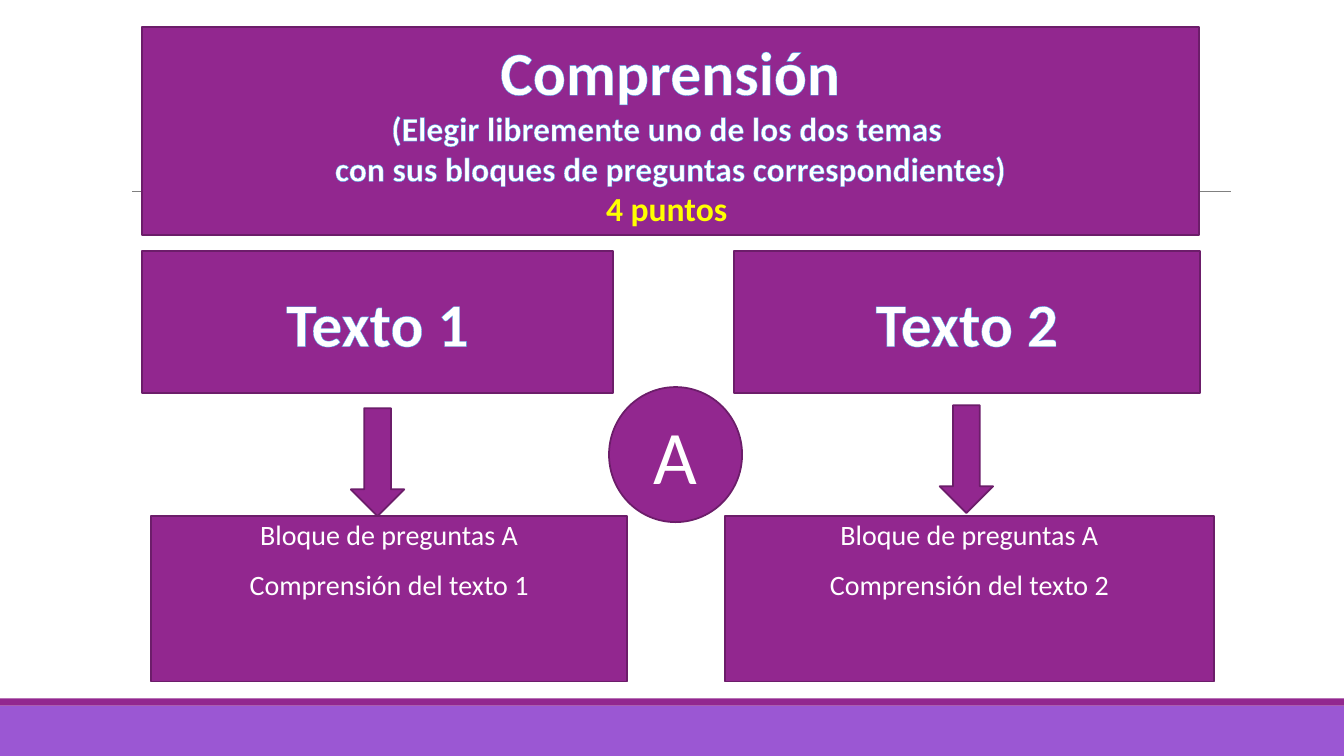
from lxml import etree
from pptx import Presentation
from pptx.dml.color import RGBColor
from pptx.enum import shapes, text
from pptx.oxml.ns import qn
from pptx.util import Inches, Pt

COLOURS = {
    "purple": "92278F",
    "dark_purple": "6C1D6A",
    "violet": "9B57D3",
    "grey": "808080",
    "white": "FFFFFF",
    "yellow": "FFFF00",
    "blue": "45A5ED",
}
FONT = "Calibri"


def colour(name):
    return RGBColor.from_string(COLOURS[name])


def place(shape, left, top, width, height):
    shape.left, shape.top = Inches(left), Inches(top)
    shape.width, shape.height = Inches(width), Inches(height)


def paint(shape, fill="purple", line="dark_purple"):
    shape.fill.solid()
    shape.fill.fore_color.rgb = colour(fill)
    if line:
        shape.line.color.rgb = colour(line)
        shape.line.width = Pt(1.25)
    else:
        shape.line.fill.background()


def outline_text(run, name, width):
    """Draw a thin coloured contour around the letters of a run."""
    line = etree.Element(qn("a:ln"), w=str(Pt(width)))
    fill = etree.SubElement(line, qn("a:solidFill"))
    etree.SubElement(fill, qn("a:srgbClr"), val=COLOURS[name])
    run.font._element.insert(0, line)


def write(paragraph, words, size=20, color="white", bold=False, outlined=False):
    paragraph.alignment = text.PP_ALIGN.CENTER
    run = paragraph.add_run()
    run.text = words
    run.font.name = FONT
    run.font.size = Pt(size)
    run.font.bold = bold
    run.font.color.rgb = colour(color)
    if outlined:
        outline_text(run, "blue", 0.8)


def add_figure(slide, kind, box, fill="purple", line="dark_purple"):
    shape = slide.shapes.add_shape(kind, *map(Inches, box))
    shape.shadow.inherit = False
    paint(shape, fill, line)
    shape.text_frame.vertical_anchor = text.MSO_ANCHOR.MIDDLE
    return shape


def add_rule(slide, left, right, top):
    """Add a thin horizontal line behind everything else."""
    rule = slide.shapes.add_connector(
        shapes.MSO_CONNECTOR.STRAIGHT,
        Inches(left), Inches(top), Inches(right), Inches(top))
    rule.line.color.rgb = colour("grey")
    rule.line.width = Pt(0.5)
    etree.SubElement(rule._element.spPr, qn("a:effectLst"))
    slide.shapes._spTree.insert(2, rule._element)


def fill_title(title):
    place(title, 1.41, 0.27, 10.48, 2.06)
    paint(title)
    frame = title.text_frame
    frame.auto_size = text.MSO_AUTO_SIZE.NONE
    frame.vertical_anchor = text.MSO_ANCHOR.MIDDLE
    lines = [
        ("Comprensión", 44, "white"),
        ("(Elegir libremente uno de los dos temas ", 24, "white"),
        ("con sus bloques de preguntas correspondientes)", 24, "white"),
        ("4 puntos ", 24, "yellow"),
    ]
    for index, (words, size, color) in enumerate(lines):
        paragraph = frame.add_paragraph() if index else frame.paragraphs[0]
        write(paragraph, words, size=size, color=color, bold=True, outlined=True)


def fill_questions(body, box, lines):
    place(body, *box)
    paint(body)
    frame = body.text_frame
    frame.auto_size = text.MSO_AUTO_SIZE.NONE
    frame.vertical_anchor = text.MSO_ANCHOR.TOP
    frame.margin_left = frame.margin_right = 0
    frame.margin_top = frame.margin_bottom = Inches(0.05)
    for index, words in enumerate(lines):
        paragraph = frame.add_paragraph() if index else frame.paragraphs[0]
        paragraph.line_spacing = 0.9
        paragraph.space_before, paragraph.space_after = Pt(12), Pt(2)
        write(paragraph, words)
        properties = paragraph._p.get_or_add_pPr()
        properties.set("marL", "0")
        properties.set("indent", "0")
        etree.SubElement(properties, qn("a:buNone"))


def main():
    presentation = Presentation()
    presentation.slide_width = Inches(13.33)
    presentation.slide_height = Inches(7.5)
    slide = presentation.slides.add_slide(presentation.slide_layouts[3])
    rectangle = shapes.MSO_SHAPE.RECTANGLE

    add_rule(slide, 1.31, 12.21, 1.9)
    add_figure(slide, rectangle, (0, 7, 13.33, 0.5), "violet", None)
    add_figure(slide, rectangle, (0, 6.93, 13.33, 0.07), "purple", None)
    fill_title(slide.shapes.title)

    # Heading left and width, arrow left and top, question block left and width
    columns = [
        (1.41, 4.67, 3.48, 4.05, 1.5, 4.72),
        (7.28, 4.62, 9.32, 4.02, 7.19, 4.85),
    ]
    for number, column in enumerate(columns, start=1):
        head_left, head_width, arrow_left, arrow_top, body_left, body_width = column
        heading = add_figure(slide, rectangle, (head_left, 2.49, head_width, 1.41))
        write(heading.text_frame.paragraphs[0], f"Texto {number}",
              size=44, bold=True, outlined=True)
        add_figure(slide, shapes.MSO_SHAPE.DOWN_ARROW,
                   (arrow_left, arrow_top, 0.53, 1.07))
        fill_questions(slide.placeholders[number],
                       (body_left, 5.12, body_width, 1.64),
                       ["Bloque de preguntas A", f"Comprensión del texto {number}"])

    badge = add_figure(slide, shapes.MSO_SHAPE.OVAL, (6.04, 3.84, 1.32, 1.34))
    write(badge.text_frame.paragraphs[0], "A", size=54)

    presentation.save("out.pptx")


if __name__ == "__main__":
    main()
